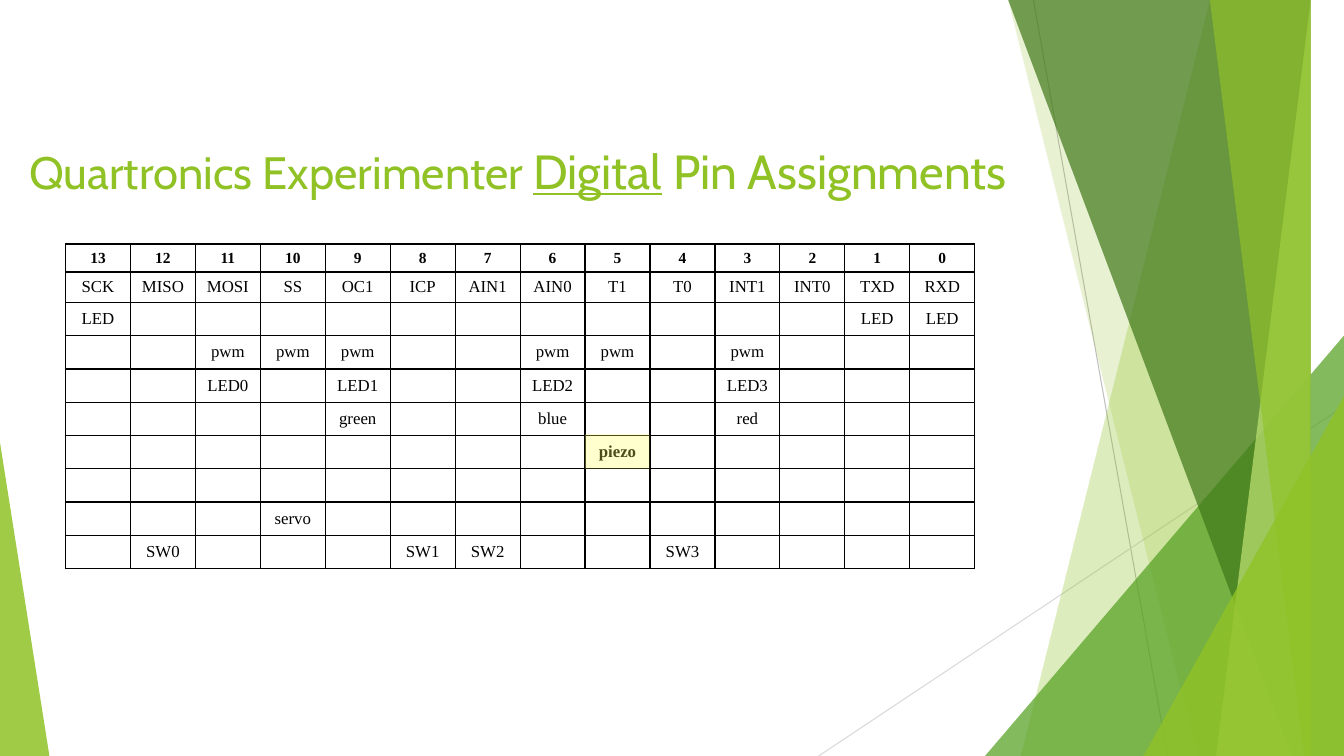
from dataclasses import dataclass

from lxml.etree import SubElement
from pptx import Presentation
from pptx.dml.color import RGBColor
from pptx.enum.shapes import MSO_CONNECTOR, MSO_SHAPE
from pptx.enum.text import MSO_ANCHOR, MSO_AUTO_SIZE, PP_ALIGN
from pptx.oxml.ns import qn
from pptx.util import Inches, Pt


@dataclass(frozen=True)
class Theme:
    lime: str = "90C226"
    green: str = "54A021"
    forest: str = "3F7819"
    pale: str = "C0E474"
    highlight: str = "FFFF5B"
    black: str = "000000"
    white: str = "FFFFFF"
    title_font: str = "Cabin"
    table_font: str = "Times New Roman"
    title_size: float = 32.4
    stress_size: float = 34.2
    header_size: int = 11
    cell_size: int = 12


THEME = Theme()
WIDTH, HEIGHT = 13.33, 7.5

TITLE = [
    ("Quartronics Experimenter ", THEME.title_size, False),
    ("Digital", THEME.stress_size, True),
    (" Pin Assignments", THEME.stress_size, False),
]
TITLE_BOX = (0.19, 1.35, 10.57, 0.92)

PINS = list(range(13, -1, -1))
# Each row maps a pin number to its label.
PIN_ROWS = [
    dict(zip(PINS, map(str, PINS))),
    dict(zip(PINS, ["SCK", "MISO", "MOSI", "SS", "OC1", "ICP", "AIN1",
                    "AIN0", "T1", "T0", "INT1", "INT0", "TXD", "RXD"])),
    dict.fromkeys([13, 1, 0], "LED"),
    dict.fromkeys([11, 10, 9, 6, 5, 3], "pwm"),
    {11: "LED0", 9: "LED1", 6: "LED2", 3: "LED3"},
    {9: "green", 6: "blue", 3: "red"},
    {5: "piezo"},
    {},
    {10: "servo"},
    {12: "SW0", 8: "SW1", 7: "SW2", 4: "SW3"},
]
TABLE_BOX = (0.65, 2.42, 9.02, 3.21)
ROW_HEIGHTS = [0.28, 0.3] + [0.33] * 8
BOLD_LABELS = {"piezo"}
PIEZO_BOX = (5.8, 4.31, 0.64, 0.34)

# Start, end, colour
RAYS = [
    ((10.25, 0), (11.58, HEIGHT), "BFBFBF"),
    ((WIDTH, 4.03), (8.12, HEIGHT), "D9D9D9"),
]
# Bands run to the right edge: top-left x, bottom-left x, colour, opacity
# Wedges: box, apex position, colour, opacity
BACKDROP = [
    ("band", (12.28, 10.04), THEME.lime, 30),
    ("band", (10.5, 11.83), THEME.lime, 20),
    ("wedge", ((9.77, 3.33, 3.56, 4.17), 1), THEME.green, 72),
    ("band", (10.21, 12.91), THEME.forest, 70),
    ("band", (13.03, 11.92), THEME.pale, 70),
    ("band", (11.96, 13.18), THEME.lime, 65),
    ("wedge", ((11.34, 3.93, 1.99, 3.57), 1), THEME.lime, 80),
    ("wedge", ((0, 4.39, 0.49, 3.11), 0), THEME.lime, 85),
]


def inches(values):
    return [Inches(value) for value in values]


def color(code):
    return RGBColor.from_string(code)


def format_font(font, code, **values):
    font.color.rgb = color(code)
    for name, value in values.items():
        setattr(font, name, value)


def paint(shape, code, opacity):
    """Give a shape a see-through fill with no outline or shadow."""
    shape.shadow.inherit = False
    shape.fill.solid()
    shape.fill.fore_color.rgb = color(code)
    shape.line.fill.background()
    fill_color = next(shape._element.spPr.iter(qn("a:srgbClr")))
    SubElement(fill_color, qn("a:alpha"), val=str(opacity * 1000))


def add_ray(page, start, end, code):
    ray = page.shapes.add_connector(MSO_CONNECTOR.STRAIGHT, *inches(start + end))
    ray.line.color.rgb = color(code)
    ray.line.width = Pt(0.75)
    SubElement(ray._element.spPr, qn("a:effectLst"))


def add_band(page, top_x, bottom_x):
    builder = page.shapes.build_freeform(top_x, 0, scale=Inches(1))
    builder.add_line_segments([(WIDTH, 0), (WIDTH, HEIGHT), (bottom_x, HEIGHT)])
    return builder.convert_to_shape()


def add_wedge(page, box, apex):
    wedge = page.shapes.add_shape(MSO_SHAPE.ISOSCELES_TRIANGLE, *inches(box))
    wedge.adjustments[0] = apex
    return wedge


def add_backdrop(page):
    for ray in RAYS:
        add_ray(page, *ray)
    makers = {"band": add_band, "wedge": add_wedge}
    for kind, geometry, code, opacity in BACKDROP:
        paint(makers[kind](page, *geometry), code, opacity)


def write_title(page):
    title = page.shapes.title
    title.left, title.top, title.width, title.height = inches(TITLE_BOX)
    frame = title.text_frame
    frame.word_wrap = True
    frame.auto_size = MSO_AUTO_SIZE.NONE
    frame.vertical_anchor = MSO_ANCHOR.TOP
    para = frame.paragraphs[0]
    para.alignment = PP_ALIGN.LEFT
    for text, size, underline in TITLE:
        span = para.add_run()
        span.text = text
        format_font(span.font, THEME.lime, name=THEME.title_font,
                    size=Pt(size), underline=underline)


def add_borders(cell, row):
    """Draw thin cell borders, with a thick rule under the header."""
    thick_sides = {0: "B", 1: "T"}
    properties = cell._tc.get_or_add_tcPr()
    for position, side in enumerate("LRTB"):
        points = 2 if thick_sides.get(row) == side else 1
        border = SubElement(properties, qn(f"a:ln{side}"), w=str(Pt(points)))
        fill = SubElement(border, qn("a:solidFill"))
        SubElement(fill, qn("a:srgbClr"), val=THEME.black)
        properties.insert(position, border)


def fill_cell(cell, row, text):
    cell.fill.solid()
    cell.fill.fore_color.rgb = color(THEME.white)
    cell.vertical_anchor = MSO_ANCHOR.MIDDLE
    cell.margin_left = cell.margin_right = Inches(0.05)
    add_borders(cell, row)
    size = Pt(THEME.cell_size if row else THEME.header_size)
    para = cell.text_frame.paragraphs[0]
    para.alignment = PP_ALIGN.CENTER
    if text:
        span = para.add_run()
        span.text = text
        format_font(span.font, THEME.black, name=THEME.table_font, size=size,
                    bold=row == 0 or text in BOLD_LABELS)
    else:
        SubElement(para._p, qn("a:endParaRPr"), sz=str(THEME.cell_size * 100))


def add_pin_table(page):
    frame = page.shapes.add_table(len(PIN_ROWS), len(PINS), *inches(TABLE_BOX))
    table = frame.table
    table.first_row = table.horz_banding = False
    for column in table.columns:
        column.width = Inches(TABLE_BOX[2] / len(PINS))
    for row, labels in enumerate(PIN_ROWS):
        table.rows[row].height = Inches(ROW_HEIGHTS[row])
        for column, pin in enumerate(PINS):
            fill_cell(table.cell(row, column), row, labels.get(pin, ""))


def main():
    deck = Presentation()
    deck.slide_width, deck.slide_height = inches((WIDTH, HEIGHT))
    page = deck.slides.add_slide(deck.slide_layouts[5])
    add_backdrop(page)
    write_title(page)
    add_pin_table(page)
    marker = page.shapes.add_shape(MSO_SHAPE.RECTANGLE, *inches(PIEZO_BOX))
    paint(marker, THEME.highlight, 30)
    deck.save("out.pptx")


if __name__ == "__main__":
    main()
